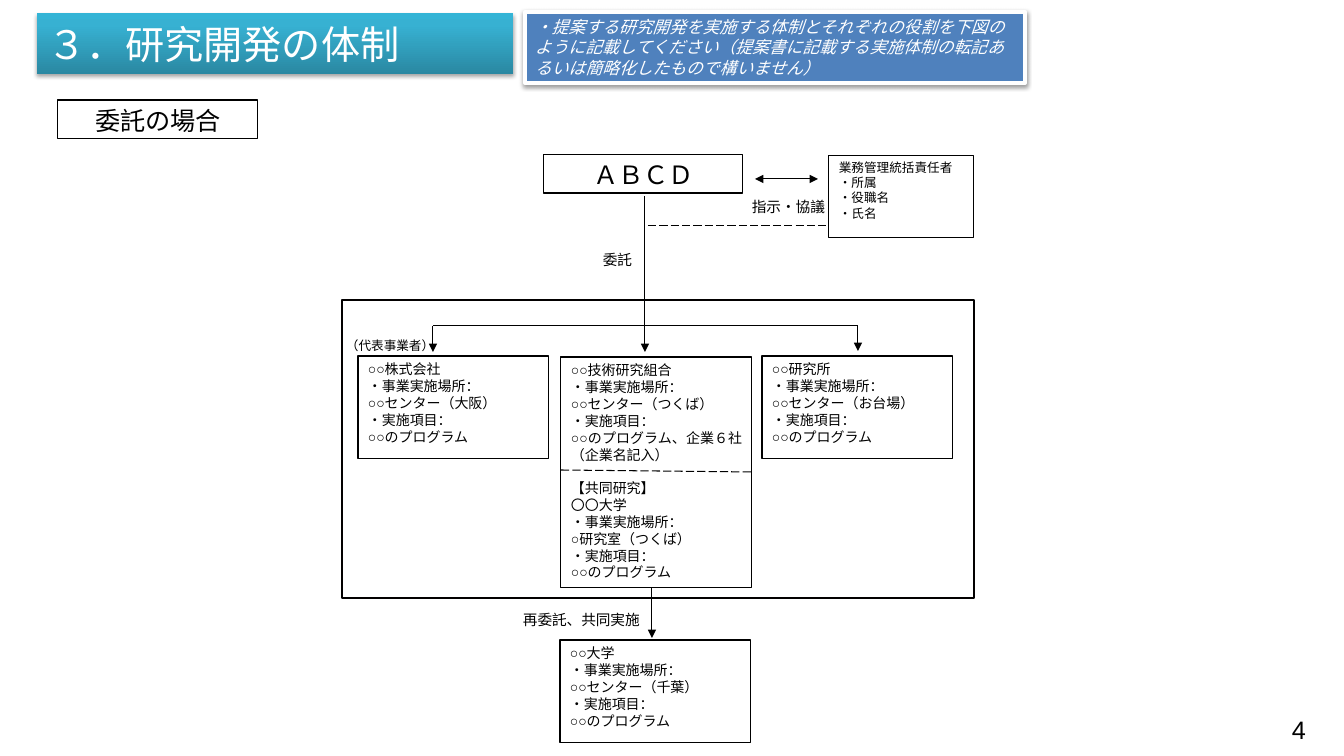
from dataclasses import dataclass

from lxml import etree
from pptx import Presentation
from pptx.dml.color import RGBColor
from pptx.enum.dml import MSO_LINE
from pptx.enum.shapes import MSO_CONNECTOR, MSO_SHAPE
from pptx.enum.text import MSO_ANCHOR, PP_ALIGN
from pptx.oxml.ns import qn
from pptx.util import Pt

RECTANGLE = MSO_SHAPE.RECTANGLE
STRAIGHT = MSO_CONNECTOR.STRAIGHT
LONG_DASH = MSO_LINE.LONG_DASH
TOP, MIDDLE = MSO_ANCHOR.TOP, MSO_ANCHOR.MIDDLE
LEFT, CENTER = PP_ALIGN.LEFT, PP_ALIGN.CENTER
RIGHT, JUSTIFY = PP_ALIGN.RIGHT, PP_ALIGN.JUSTIFY

SLIDE_WIDTH, SLIDE_HEIGHT = 1344, 756
EMU_PER_PX = 12192000 / SLIDE_WIDTH
TITLE_ONLY = 5


@dataclass(frozen=True)
class Theme:
    font: str = "Arial"
    ink: str = "000000"
    paper: str = "FFFFFF"
    note: str = "4F81BD"
    frame: str = "020000"
    title_stops: tuple = ((0, "2A88A2"), (80, "37B1D2"), (100, "34B4D6"))
    title_size: float = 28
    heading_size: float = 18
    note_size: float = 12
    label_size: float = 10.5
    body_size: float = 10
    small_size: float = 9
    hairline: float = 0.75


THEME = Theme()


def px(length):
    return round(length * EMU_PER_PX)


def color(value):
    return RGBColor.from_string(value)


def add_xml(parent, tag, **attributes):
    return etree.SubElement(parent, qn(tag), attributes)


def style_span(span, size, ink=THEME.ink, italic=None):
    span.font.name = THEME.font
    span.font.size = Pt(size)
    span.font.italic = italic
    span.font.color.rgb = color(ink)
    add_xml(span.font._element, "a:ea", typeface=THEME.font)


def write(shape, text, size, align=JUSTIFY, ink=THEME.ink, anchor=TOP, italic=None):
    frame = shape.text_frame
    frame.text = text
    frame.word_wrap = True
    frame.vertical_anchor = anchor
    for para in frame.paragraphs:
        para.alignment = align
        for span in para.runs:
            style_span(span, size, ink, italic)


def add_box(page, area, fill=THEME.paper, line=THEME.ink, width=THEME.hairline):
    box = page.shapes.add_shape(RECTANGLE, *map(px, area))
    box.shadow.inherit = False
    if fill:
        box.fill.solid()
        box.fill.fore_color.rgb = color(fill)
    else:
        box.fill.background()
    box.line.color.rgb = color(line)
    box.line.width = Pt(width)
    return box


def add_text_box(page, area, text, size, align=JUSTIFY):
    box = page.shapes.add_textbox(*map(px, area))
    write(box, text, size, align)
    return box


def add_line(page, start, end, dashed=False, arrows=()):
    line = page.shapes.add_connector(STRAIGHT, *map(px, start + end))
    line.line.color.rgb = color(THEME.ink)
    line.line.width = Pt(THEME.hairline)
    if dashed:
        line.line.dash_style = LONG_DASH
    for arrow in arrows:
        add_xml(line.line._ln, arrow, type="triangle")
    add_xml(line._element.spPr, "a:effectLst")


def add_shadow(shape, opacity, distance):
    shape.shadow.inherit = False
    effects = shape._element.spPr.find(qn("a:effectLst"))
    shadow = add_xml(effects, "a:outerShdw", blurRad=str(Pt(3.1)), dist=str(Pt(distance)),
                     dir="5400000", rotWithShape="0")
    shade = add_xml(shadow, "a:srgbClr", val=THEME.ink)
    add_xml(shade, "a:alpha", val=str(opacity * 1000))


def add_title(page, area, text):
    title = page.shapes.title
    title.left, title.top, title.width, title.height = map(px, area)
    gradient = add_xml(title._element.spPr, "a:gradFill", rotWithShape="1")
    stops = add_xml(gradient, "a:gsLst")
    for position, value in THEME.title_stops:
        stop = add_xml(stops, "a:gs", pos=str(position * 1000))
        add_xml(stop, "a:srgbClr", val=value)
    add_xml(gradient, "a:lin", ang="16200000", scaled="0")
    add_shadow(title, 35, 1.8)
    write(title, text, THEME.title_size, LEFT, THEME.paper, MIDDLE)


def add_note(page, area, text):
    note = add_box(page, area, THEME.note, THEME.paper, 3)
    add_shadow(note, 38, 1.6)
    write(note, text, THEME.note_size, LEFT, THEME.paper, italic=True)


def add_heading(page, area, text):
    write(add_box(page, area), text, THEME.heading_size, CENTER)


def add_manager(page, area, heading, fields):
    box = add_box(page, area)
    write(box, "\n".join((heading, *fields)), THEME.small_size)
    box.text_frame.margin_top = box.text_frame.margin_bottom = px(4)
    for para in box.text_frame.paragraphs[1:]:
        blank = para.add_run()
        blank.text = "\t"
        style_span(blank, THEME.small_size)
        blank.font.underline = True
        tabs = add_xml(para._p.get_or_add_pPr(), "a:tabLst")
        add_xml(tabs, "a:tab", pos=str(px(105)), algn="l")


def member_text(name, place, item):
    return "\n".join((name, "・事業実施場所：", place, "・実施項目：", item))


def add_member(page, area, *members):
    box = add_box(page, area)
    write(box, "\n".join(members), THEME.body_size)
    return box


def add_page_number(page, area, text):
    box = add_text_box(page, area, text, THEME.heading_size, RIGHT)
    frame = box.text_frame
    frame.word_wrap = False
    frame.vertical_anchor = MIDDLE
    frame.margin_left = frame.margin_top = frame.margin_right = frame.margin_bottom = 0


def main():
    deck = Presentation()
    deck.slide_width, deck.slide_height = px(SLIDE_WIDTH), px(SLIDE_HEIGHT)
    page = deck.slides.add_slide(deck.slide_layouts[TITLE_ONLY])
    program = "○○のプログラム"
    end_arrow = ("a:tailEnd",)

    add_title(page, (37, 13, 476, 61), "３．研究開発の体制")
    add_note(page, (525, 12, 500, 71),
             "・提案する研究開発を実施する体制とそれぞれの役割を下図のように記載してください"
             "（提案書に記載する実施体制の転記あるいは簡略化したもので構いません）")
    add_heading(page, (58, 100, 200, 39), "委託の場合")
    add_heading(page, (544, 154, 199, 39), "ＡＢＣＤ")
    add_manager(page, (829, 156, 145, 82), "業務管理統括責任者",
                ("・所属", "・役職名", "・氏名"))
    add_box(page, (342, 300, 632, 298), None, THEME.frame, 1)

    add_member(page, (358, 356, 191, 103),
               member_text("○○株式会社", "○○センター（大阪）", program))
    union = add_member(
        page, (561, 357, 191, 231),
        member_text("○○技術研究組合", "○○センター（つくば）",
                    program + "、企業６社（企業名記入）"),
        "【共同研究】",
        member_text("〇〇大学", "○研究室（つくば）", program))
    union.text_frame.paragraphs[5].space_before = Pt(12)
    add_member(page, (762, 356, 191, 103),
               member_text("○○研究所", "○○センター（お台場）", program))
    add_member(page, (560, 640, 191, 103),
               member_text("○○大学", "○○センター（千葉）", program))

    add_line(page, (755, 179), (818, 179), arrows=("a:headEnd", "a:tailEnd"))
    add_line(page, (648, 226), (829, 226), dashed=True)
    add_line(page, (561, 470), (752, 472), dashed=True)
    add_line(page, (433, 326), (858, 326))
    for x, top, bottom in ((645, 196, 352), (433, 326, 352), (858, 326, 351), (652, 588, 638)):
        add_line(page, (x, top), (x, bottom), arrows=end_arrow)

    for area, text, size in (
        ((742, 193, 103, 33), "指示・協議", THEME.label_size),
        ((593, 246, 55, 33), "委託", THEME.label_size),
        ((513, 606, 141, 28), "再委託、共同実施", THEME.label_size),
        ((336, 333, 118, 29), "（代表事業者）", THEME.small_size),
    ):
        add_text_box(page, area, text, size)
    add_page_number(page, (1248, 717, 58, 25), "4")
    deck.save("out.pptx")


if __name__ == "__main__":
    main()
